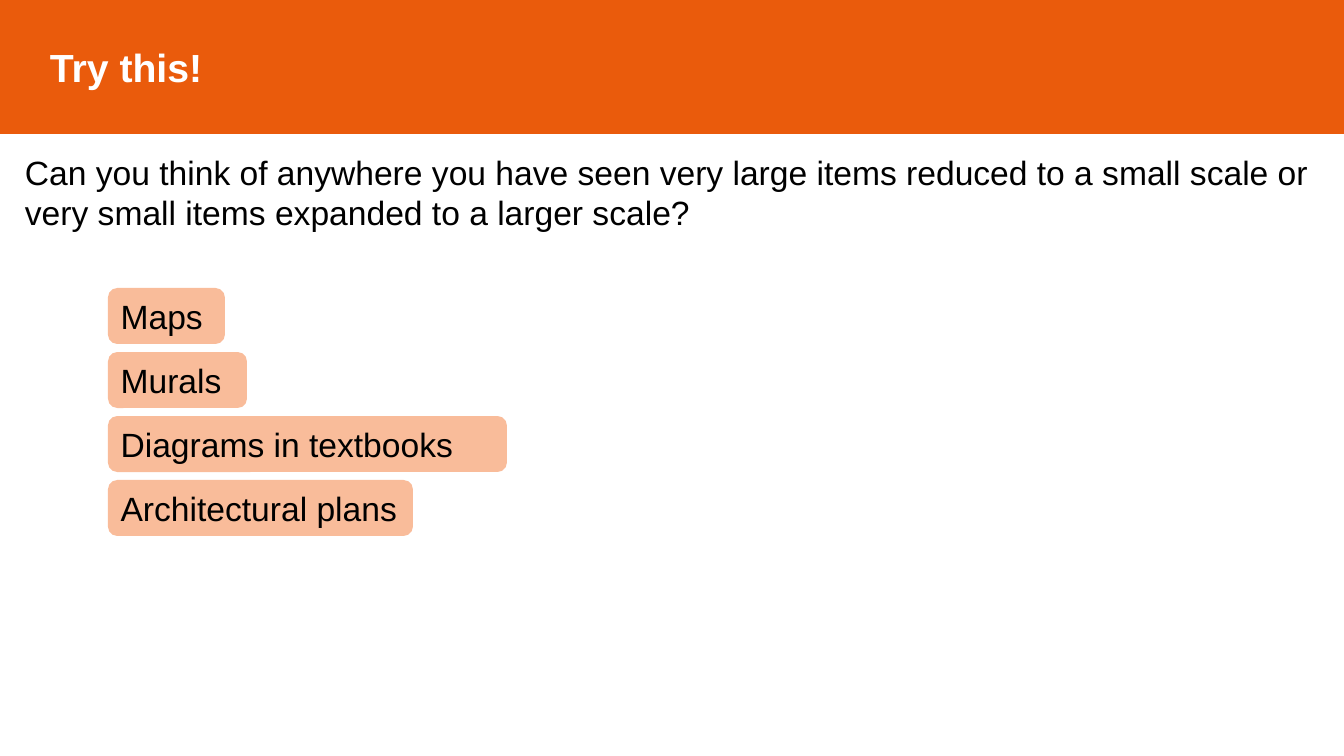
import pptx
import pptx.util
import pptx.dml.color
import pptx.enum.shapes
import pptx.enum.text

KIND = pptx.enum.shapes.MSO_SHAPE
ANCHOR = pptx.enum.text.MSO_ANCHOR
SCALE = 914400 / 100.8


def color(code):
    return pptx.dml.color.RGBColor.from_string(code)


def add_box(kind, place, text, size, ink, fill=None):
    area = [round(n * SCALE) for n in place]
    if kind is None:
        box = slide.shapes.add_textbox(*area)
    else:
        box = slide.shapes.add_shape(kind, *area)
        box.shadow.inherit = False
        box.fill.solid()
        box.fill.fore_color.rgb = color(fill)
        box.line.fill.background()
    frame = box.text_frame
    frame.word_wrap = True
    frame.vertical_anchor = ANCHOR.TOP
    frame.text = text
    para = frame.paragraphs[0]
    para.alignment = pptx.enum.text.PP_ALIGN.LEFT
    font = para.runs[0].font
    font.name = "Arial"
    font.size = pptx.util.Pt(size)
    font.color.rgb = color(ink)
    return box


deck = pptx.Presentation()
deck.slide_width = round(1344 * SCALE)
deck.slide_height = round(756 * SCALE)
slide = deck.slides.add_slide(deck.slide_layouts[6])

banner = add_box(KIND.RECTANGLE, (0, 0, 1344, 133), "Try this!", 28, "FFFFFF", "EA5B0C")
banner.line.color.rgb = color("EA5B0C")
banner.line.width = pptx.util.Pt(1)
banner.text_frame.vertical_anchor = ANCHOR.MIDDLE
title = banner.text_frame.paragraphs[0]
title.runs[0].font.bold = True
title._p.get_or_add_pPr().set("marL", str(round(40 * SCALE)))

ask = (
    "Can you think of anywhere you have seen very large items reduced "
    "to a small scale or very small items expanded to a larger scale?"
)
prompt = add_box(None, (15, 147, 1316, 92), ask, 24, "000000")
prompt.text_frame.auto_size = pptx.enum.text.MSO_AUTO_SIZE.SHAPE_TO_FIT_TEXT

answers = [
    ("Maps", 117),
    ("Murals", 139),
    ("Diagrams in textbooks", 399),
    ("Architectural plans", 305),
]
for row, (text, width) in enumerate(answers):
    place = (108, 288 + 64 * row, width, 56)
    chip = add_box(KIND.ROUNDED_RECTANGLE, place, text, 24, "000000", "F9BC9A")
    chip.text_frame.auto_size = pptx.enum.text.MSO_AUTO_SIZE.SHAPE_TO_FIT_TEXT

deck.save("out.pptx")
